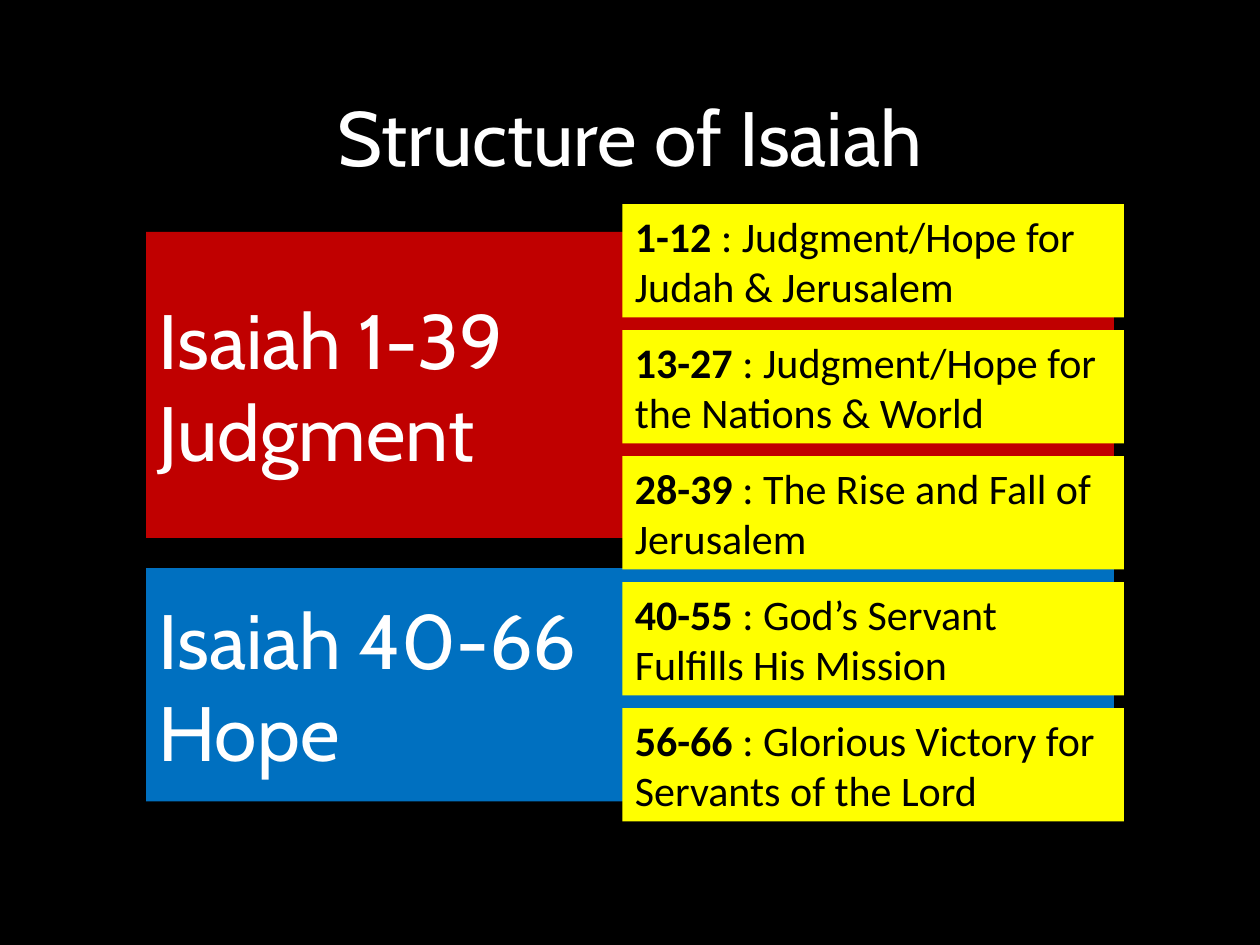
from dataclasses import dataclass

from pptx import Presentation
from pptx.dml.color import RGBColor as RGB
from pptx.enum.shapes import MSO_SHAPE as Shape
from pptx.enum.text import MSO_ANCHOR as Anchor, MSO_AUTO_SIZE as Fit, PP_ALIGN as Align
from pptx.util import Inches, Pt

TITLE = "Structure of Isaiah"
HALVES = [
    ("Isaiah 1-39\nJudgment", 1.84, 2.43, "C00000"),
    ("Isaiah 40-66\nHope", 4.51, 1.85, "0070C0"),
]
PARTS = [
    ("1-12", "Judgment/Hope for Judah & Jerusalem"),
    ("13-27", "Judgment/Hope for the Nations & World"),
    ("28-39", "The Rise and Fall of Jerusalem"),
    ("40-55", "God’s Servant Fulfills His Mission"),
    ("56-66", "Glorious Victory for Servants of the Lord"),
]
TOP, STEP = 1.62, 1.0


@dataclass(frozen=True)
class Theme:
    back: str = "000000"
    light: str = "FFFFFF"
    dark: str = "000000"
    note: str = "FFFF00"
    head: str = "Cabin"
    body: str = "Calibri"
    large: int = 44
    small: int = 24


THEME = Theme()


def style(run, font, size, color, bold=False):
    run.font.name = font
    run.font.size = Pt(size)
    run.font.color.rgb = RGB.from_string(color)
    run.font.bold = bold


def add_box(slide, area, fill):
    box = slide.shapes.add_shape(Shape.RECTANGLE, *map(Inches, area))
    box.shadow.inherit = False
    box.fill.solid()
    box.fill.fore_color.rgb = RGB.from_string(fill)
    box.line.fill.background()
    box.text_frame.word_wrap = True
    return box.text_frame


def add_large(frame, text, align):
    frame.text = text
    frame.vertical_anchor = Anchor.MIDDLE
    for para in frame.paragraphs:
        para.alignment = align
        for run in para.runs:
            style(run, THEME.head, THEME.large, THEME.light)


def add_title(slide):
    frame = slide.shapes.add_textbox(*map(Inches, (0.69, 0.4, 8.62, 1.45))).text_frame
    frame.word_wrap = True
    add_large(frame, TITLE, Align.CENTER)
    frame.paragraphs[0].line_spacing = 0.9


def add_part(slide, row, verses, theme):
    frame = add_box(slide, (4.94, TOP + row * STEP, 3.98, 0.9), THEME.note)
    frame.vertical_anchor = Anchor.TOP
    frame.auto_size = Fit.SHAPE_TO_FIT_TEXT
    para = frame.paragraphs[0]
    para.alignment = Align.LEFT
    for text, bold in ((verses, True), (f" : {theme}", False)):
        run = para.add_run()
        run.text = text
        style(run, THEME.body, THEME.small, THEME.dark, bold)


def main():
    """Build the slide that shows the structure of Isaiah."""
    deck = Presentation()
    deck.slide_width, deck.slide_height = Inches(10), Inches(7.5)
    slide = deck.slides.add_slide(deck.slide_layouts[6])
    slide.background.fill.solid()
    slide.background.fill.fore_color.rgb = RGB.from_string(THEME.back)
    add_title(slide)
    for text, top, height, color in HALVES:
        add_large(add_box(slide, (1.16, top, 7.68, height), color), text, Align.LEFT)
    for row, (verses, theme) in enumerate(PARTS):
        add_part(slide, row, verses, theme)
    deck.save("out.pptx")


if __name__ == "__main__":
    main()
